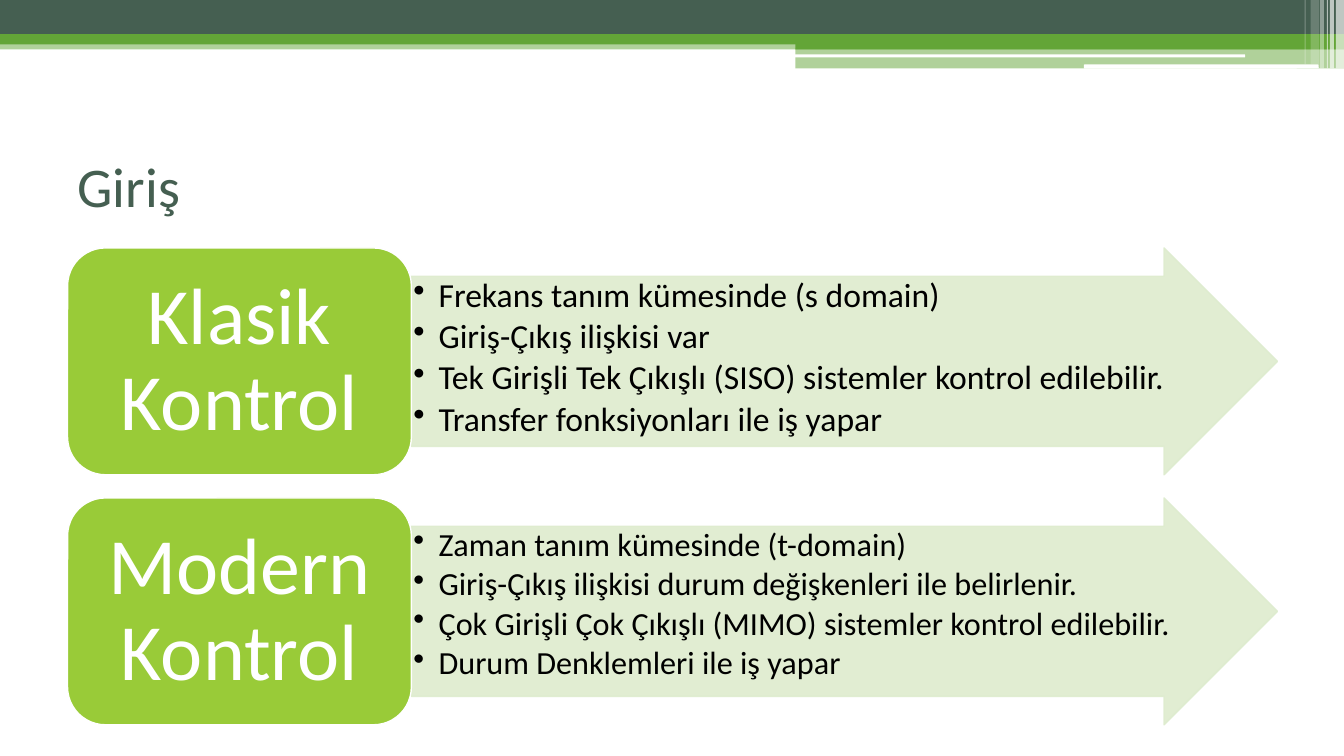
"""Build the slide comparing classical and modern control."""
from lxml import etree
from pptx import Presentation, util as u
from pptx.dml.color import RGBColor
from pptx.enum import shapes, text
from pptx.oxml.ns import qn

PX = 9144
COLORS = {"dark": "455F51", "green": "63A537", "lime": "99CB38",
          "pale": "DEECCE", "white": "FFFFFF", "black": "000000"}
FONT = "Calibri"
KIND = shapes.MSO_SHAPE


def paint(fill, color, opacity=100):
    fill.solid()
    fill.fore_color.rgb = RGBColor.from_string(COLORS[color])
    if opacity < 100:
        hue = fill._xPr.find(f".//{qn('a:srgbClr')}")
        etree.SubElement(hue, qn("a:alpha"), val=str(opacity * 1000))


def add_block(kind, box, color, opacity=100, outline=None):
    block = slide.shapes.add_shape(kind, *(n * PX for n in box))
    block.shadow.inherit = False
    paint(block.fill, color, opacity)
    if outline:
        paint(block.line.fill, outline, opacity)
        block.line.width = u.Pt(1)
    else:
        block.line.fill.background()
    return block


deck = Presentation()
deck.slide_width, deck.slide_height = 1333 * PX, 750 * PX
slide = deck.slides.add_slide(deck.slide_layouts[5])

bands = [
    (KIND.RECTANGLE, (0, 40, 1333, 9), "green", 50),
    (KIND.RECTANGLE, (0, 0, 1333, 34), "dark", 100),
    (KIND.RECTANGLE, (0, 34, 1333, 10), "green", 100),
    (KIND.RECTANGLE, (789, 39, 544, 10), "green", 100),
    (KIND.RECTANGLE, (789, 48, 544, 20), "green", 50),
    (KIND.ROUNDED_RECTANGLE, (788, 54, 447, 3), "white", 100),
    (KIND.ROUNDED_RECTANGLE, (1075, 64, 233, 4), "white", 100),
]
for band in bands:
    add_block(*band)

stripes = [(1325, 8, 68, 65), (1319, 4, 68, 65), (1316, 1, 68, 60),
           (1309, 4, 68, 40), (1300, 8, 64, 20), (1294, 1, 64, 30)]
for left, width, height, opacity in stripes:
    add_block(KIND.RECTANGLE, (left, 0, width, height), "white", opacity)

title = slide.shapes.title
title.left, title.top, title.width, title.height = (
    n * PX for n in (67, 125, 1200, 117))
title.text_frame.text = "Giriş"
title.text_frame.vertical_anchor = text.MSO_ANCHOR.MIDDLE
heading = title.text_frame.paragraphs[0]
heading.alignment = text.PP_ALIGN.LEFT
heading.font.name, heading.font.size = FONT, u.Pt(40)
heading.font.color.rgb = RGBColor.from_string(COLORS["dark"])

approaches = [
    ("Klasik Kontrol", 24, [
        "Frekans tanım kümesinde (s domain)",
        "Giriş-Çıkış ilişkisi var",
        "Tek Girişli Tek Çıkışlı (SISO) sistemler kontrol edilebilir.",
        "Transfer fonksiyonları ile iş yapar"]),
    ("Modern Kontrol", 23, [
        "Zaman tanım kümesinde (t-domain)",
        "Giriş-Çıkış ilişkisi durum değişkenleri ile belirlenir.",
        "Çok Girişli Çok Çıkışlı (MIMO) sistemler kontrol edilebilir.",
        "Durum Denklemleri ile iş yapar"]),
]
for row, (approach, point_size, points) in enumerate(approaches):
    top = 246 + 248 * row
    arrow = add_block(KIND.RIGHT_ARROW, (408, top, 859, 225), "pale", 90, "pale")
    arrow.adjustments[0] = 0.75
    label = add_block(KIND.ROUNDED_RECTANGLE, (67, top, 341, 225), "lime",
                      outline="white")
    contents = [
        (arrow, points, point_size, "black", 0.15, (2, 2),
         text.MSO_ANCHOR.TOP, text.PP_ALIGN.LEFT),
        (label, [approach], 57, "white", 0.35, (24, 12),
         text.MSO_ANCHOR.MIDDLE, text.PP_ALIGN.CENTER),
    ]
    for block, lines, size, color, gap, inset, anchor, alignment in contents:
        frame = block.text_frame
        frame.text = "\n".join(lines)
        frame.word_wrap = True
        frame.vertical_anchor = anchor
        frame.margin_left = frame.margin_right = inset[0] * PX
        frame.margin_top = frame.margin_bottom = inset[1] * PX
        for line in frame.paragraphs:
            line.alignment = alignment
            line.line_spacing = 0.9
            line.space_after = u.Pt(size * gap)
            line.font.name, line.font.size = FONT, u.Pt(size)
            line.font.color.rgb = RGBColor.from_string(COLORS[color])
    for point in arrow.text_frame.paragraphs:
        point.level = 1
        props = point._p.get_or_add_pPr()
        props.set("marL", str(25 * PX))
        props.set("indent", str(-25 * PX))
        bullet = etree.Element(qn("a:buChar"), char="•")
        props.find(qn("a:defRPr")).addprevious(bullet)

deck.save("out.pptx")
